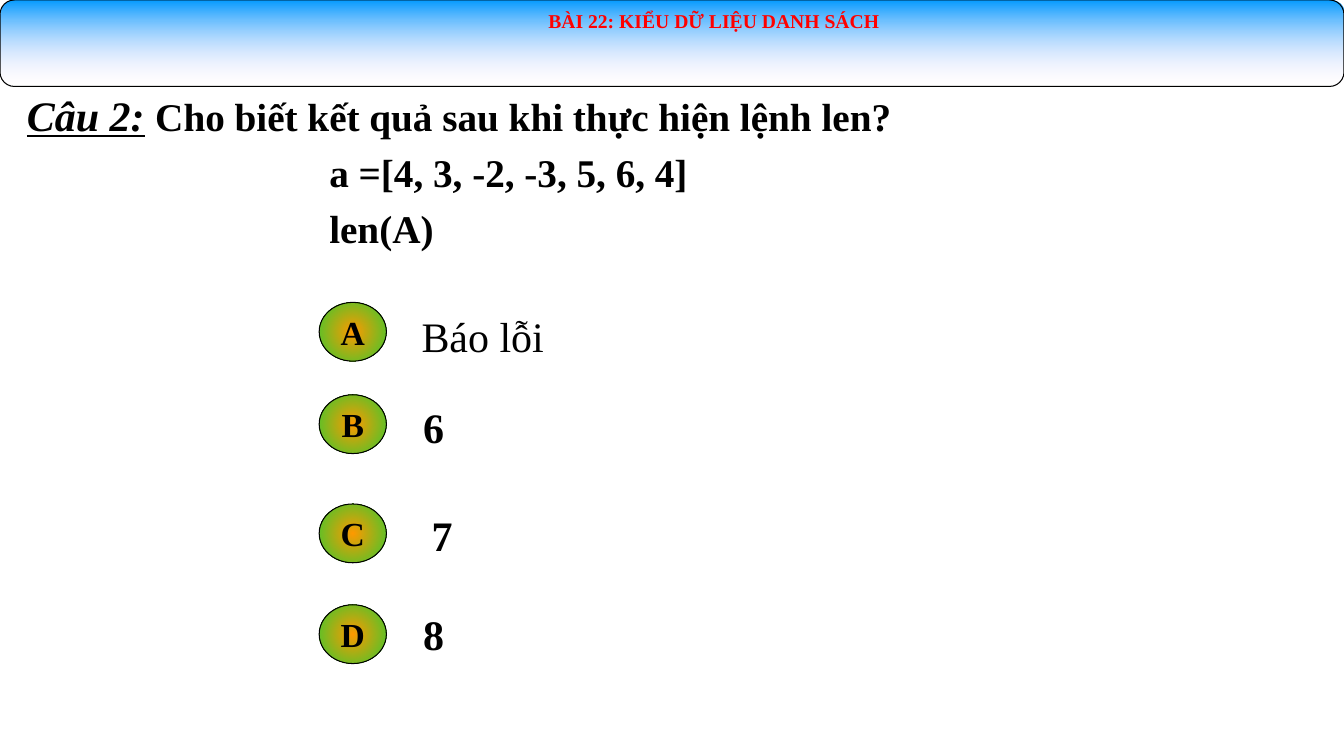
from pptx import Presentation
from pptx.dml.color import RGBColor
from pptx.enum.shapes import MSO_SHAPE as SHAPE
from pptx.enum.text import MSO_ANCHOR as ANCHOR, MSO_AUTO_SIZE as AUTO, PP_ALIGN as ALIGN
from pptx.oxml import parse_xml
from pptx.oxml.ns import nsdecls
from pptx.util import Inches, Pt

UNIT = Inches(1) // 6  # the slide is a grid of 80 columns by 45 rows
COLS, ROWS = 80, 45


def rgb(hex_code):
    return RGBColor.from_string(hex_code)


class Deck:
    font, ink = "Times New Roman", "000000"

    def __init__(self, prs):
        self.s = prs.slides.add_slide(prs.slide_layouts[1])

    def box(self, col, row, cols, rows):
        return [round(n * UNIT) for n in (col, row, cols, rows)]

    def run(self, p, text, size, color=ink, bold=True, italic=None, underline=None):
        r = p.add_run()
        r.text = text
        f = r.font
        f.name, f.size, f.bold = self.font, Pt(size), bold
        f.italic, f.underline = italic, underline
        f.color.rgb = rgb(color)

    def frame(self, sp, anchor=ANCHOR.TOP):
        tf = sp.text_frame
        tf.word_wrap, tf.auto_size, tf.vertical_anchor = True, AUTO.NONE, anchor
        return tf

    def placeholder(self, sp, *grid):
        sp.left, sp.top, sp.width, sp.height = self.box(*grid)
        return self.frame(sp)

    def paragraph(self, p, align=ALIGN.LEFT, indent=0, spacing=1.0, before=0):
        p.alignment, p.line_spacing, p.space_before = align, spacing, Pt(before)
        pPr = p._p.get_or_add_pPr()
        pPr.set("marL", str(round(indent * UNIT)))
        pPr.set("indent", "0")
        pPr.append(parse_xml(f"<a:buNone {nsdecls('a')}/>"))
        return p

    def shape(self, kind, grid, start, end, direction, end_alpha=100):
        sp = self.s.shapes.add_shape(kind, *self.box(*grid))
        sp.element.spPr.insert(2, parse_xml(
            f'<a:gradFill {nsdecls("a")} rotWithShape="1"><a:gsLst>'
            f'<a:gs pos="0"><a:srgbClr val="{start}"/></a:gs>'
            f'<a:gs pos="100000"><a:srgbClr val="{end}">'
            f'<a:alpha val="{end_alpha * 1000}"/></a:srgbClr></a:gs>'
            f'</a:gsLst>{direction}</a:gradFill>'))
        sp.line.color.rgb, sp.line.width = rgb(self.ink), Pt(0.75)
        sp.shadow.inherit = False
        return sp

    def badge(self, letter, row):
        centre = ('<a:path path="circle"><a:fillToRect l="50000" t="50000" '
                  'r="50000" b="50000"/></a:path>')
        sp = self.shape(SHAPE.OVAL, (19, row, 4, 3.5), "FF9900", "33CC33", centre)
        p = self.frame(sp, ANCHOR.MIDDLE).paragraphs[0]
        p.alignment = ALIGN.CENTER
        self.run(p, letter, 24)

    def answer(self, text, grid, bold, spacing):
        sp = self.s.shapes.add_textbox(*self.box(*grid))
        p = self.frame(sp).paragraphs[0]
        p.line_spacing = spacing
        self.run(p, text, 30, bold=bold)


prs = Presentation()
prs.slide_width, prs.slide_height = COLS * UNIT, ROWS * UNIT
deck = Deck(prs)
title, body = deck.s.shapes.title, deck.s.placeholders[1]

# Header bar, with the lesson title brought in front of it
deck.shape(SHAPE.ROUNDED_RECTANGLE, (0, 0, COLS, 5.15), "0099FF", "FFE5FF",
           '<a:lin ang="5400000" scaled="1"/>', end_alpha=0)
deck.s.shapes.element.append(title.element)
tf = deck.placeholder(title, 12, 0.2, 61, 5)
p = deck.paragraph(tf.paragraphs[0], ALIGN.CENTER)
deck.run(p, "BÀI 22: KIỂU DỮ LIỆU DANH SÁCH", 14, "FF0000")

# Question and its code lines
tf = deck.placeholder(body, 1, 5, 79, 10.4)
p = deck.paragraph(tf.paragraphs[0])
deck.run(p, "Câu 2:", 30, italic=True, underline=True)
deck.run(p, " ", 30, italic=True)
deck.run(p, "Cho biết kết quả sau khi thực hiện lệnh len?", 28)
for code in ("a =[4, 3, -2, -3, 5, 6, 4]", "len(A)"):
    p = deck.paragraph(tf.add_paragraph(), indent=18, spacing=0.9, before=10)
    deck.run(p, code, 28)

# Options: letter, badge row, answer, answer grid, bold, line spacing
options = [
    ("A", 18, "Báo lỗi", (24.5, 18.55, 19.75, 3.35), False, 0.9),
    ("B", 23.5, "6", (24.6, 23.6, 2.5, 3.65), True, 1.0),
    ("C", 30, "7", (25.1, 30.05, 2.5, 3.65), True, 1.0),
    ("D", 36, "8", (24.6, 35.95, 2.5, 3.65), True, 1.0),
]
for letter, row, text, grid, bold, spacing in options:
    deck.badge(letter, row)
    deck.answer(text, grid, bold, spacing)

prs.save("out.pptx")
